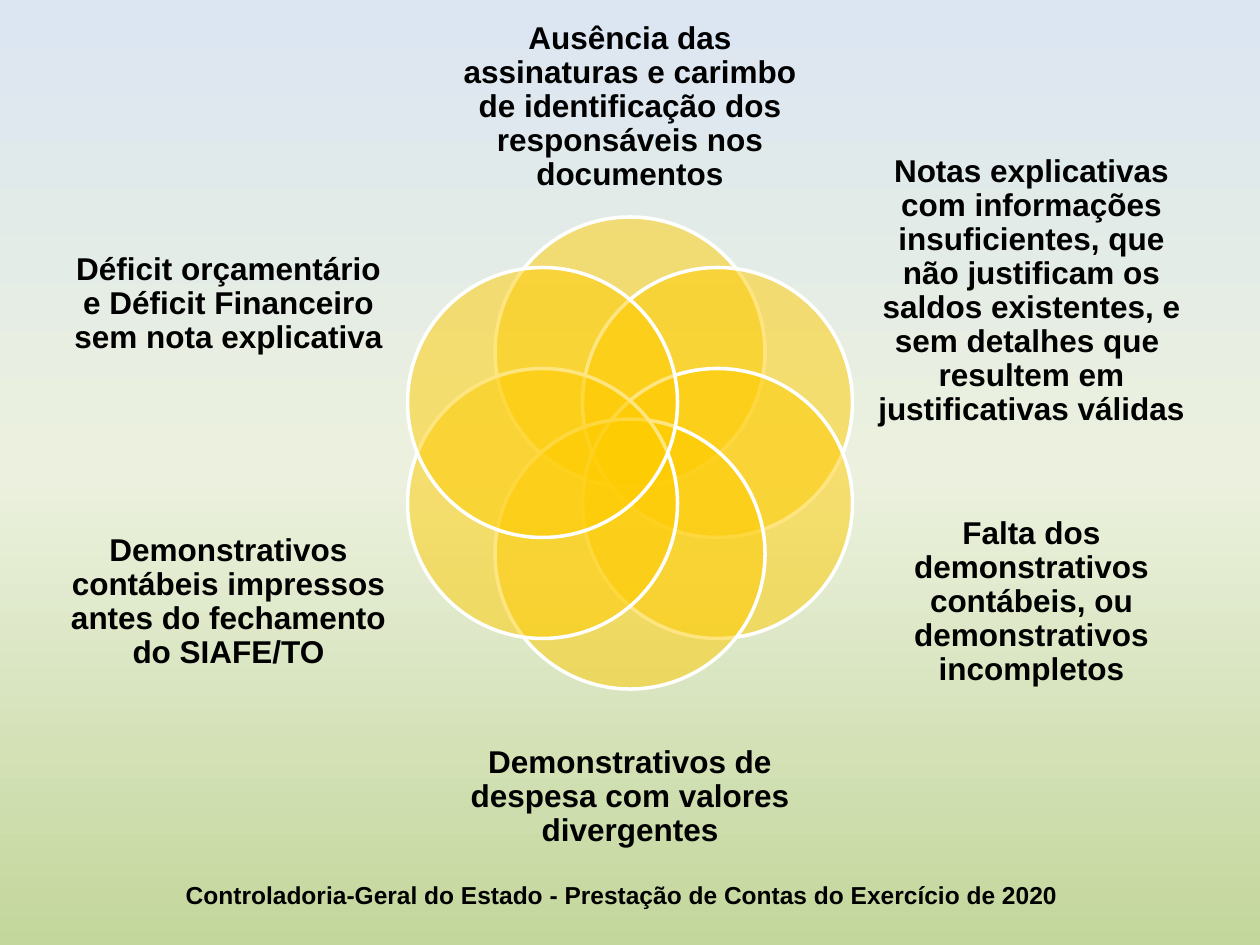
from copy import deepcopy
from dataclasses import dataclass
from math import cos, radians, sin

from lxml.etree import SubElement
from pptx import Presentation
from pptx.dml.color import RGBColor
from pptx.enum.shapes import MSO_SHAPE as Shape
from pptx.enum.text import MSO_ANCHOR as Anchor, PP_ALIGN as Align
from pptx.oxml.ns import qn
from pptx.util import Emu, Pt

EMU_PER_PX = 914400 / 126
CENTER_X, CENTER_Y = 630, 453
ORBIT = 101
DIAMETER = 270
BACKGROUND = ("DCE6F2", "EBF1DE", "C3D69B")


@dataclass(frozen=True)
class Petal:
    text: str
    x: int
    y: int
    w: int
    h: int


PETALS = [
    Petal("Ausência das assinaturas e carimbo de identificação dos responsáveis nos documentos",
          462, 16, 336, 183),
    Petal("Notas explicativas com informações insuficientes, que não justificam os saldos "
          "existentes, e sem detalhes que  resultem em justificativas válidas",
          872, 140, 319, 302),
    Petal("Falta dos demonstrativos contábeis, ou demonstrativos incompletos",
          872, 490, 319, 224),
    Petal("Demonstrativos de despesa com valores divergentes",
          462, 706, 336, 183),
    Petal("Demonstrativos contábeis impressos antes do fechamento do SIAFE/TO",
          69, 490, 319, 224),
    Petal("Déficit orçamentário e Déficit Financeiro sem nota explicativa",
          69, 192, 319, 224),
]


def px(n: float) -> Emu:
    return Emu(round(n * EMU_PER_PX))


def color(value: str) -> RGBColor:
    return RGBColor.from_string(value)


def paint_background(s) -> None:
    fill = s.background.fill
    fill.gradient()
    fill.gradient_angle = 270
    stops = s.element.xpath(".//a:gsLst")[0]
    stops.insert(1, deepcopy(stops[0]))
    for i, (stop, value) in enumerate(zip(fill.gradient_stops, BACKGROUND)):
        stop.position = i / 2
        stop.color.rgb = color(value)


def add_text(s, text: str, x: int, y: int, w: int, h: int, *, size: int = 18,
             spacing: float = 0.9, inset: tuple[int, int] = (0, 0),
             anchor=Anchor.MIDDLE) -> None:
    tf = s.shapes.add_textbox(px(x), px(y), px(w), px(h)).text_frame
    tf.word_wrap = True
    tf.vertical_anchor = anchor
    tf.margin_left = tf.margin_right = px(inset[0])
    tf.margin_top = tf.margin_bottom = px(inset[1])
    p = tf.paragraphs[0]
    p.alignment = Align.CENTER
    p.line_spacing = spacing
    r = p.add_run()
    r.text = text
    r.font.name = "Arial"
    r.font.size = Pt(size)
    r.font.bold = True
    r.font.color.rgb = color("000000")


def add_circle(s, angle: float) -> None:
    x = CENTER_X + ORBIT * sin(radians(angle)) - DIAMETER / 2
    y = CENTER_Y - ORBIT * cos(radians(angle)) - DIAMETER / 2
    sp = s.shapes.add_shape(Shape.OVAL, px(x), px(y), px(DIAMETER), px(DIAMETER))
    sp.shadow.inherit = False
    sp.fill.solid()
    sp.fill.fore_color.rgb = color("FFCC00")
    rgb = sp.element.spPr.find(qn("a:solidFill")).find(qn("a:srgbClr"))
    SubElement(rgb, qn("a:alpha"), val="50000")
    sp.line.color.rgb = color("FFFFFF")
    sp.line.width = Pt(2)


def main() -> None:
    prs = Presentation()
    prs.slide_width, prs.slide_height = px(1260), px(945)
    s = prs.slides.add_slide(prs.slide_layouts[6])
    paint_background(s)
    add_text(s, "Controladoria-Geral do Estado - Prestação de Contas do Exercício de 2020",
             69, 874, 1106, 43, size=14, spacing=1.0, inset=(13, 6), anchor=Anchor.TOP)
    for i, petal in enumerate(PETALS):
        add_circle(s, i * 360 / len(PETALS))
        add_text(s, petal.text, petal.x, petal.y, petal.w, petal.h)
    prs.save("out.pptx")


if __name__ == "__main__":
    main()
